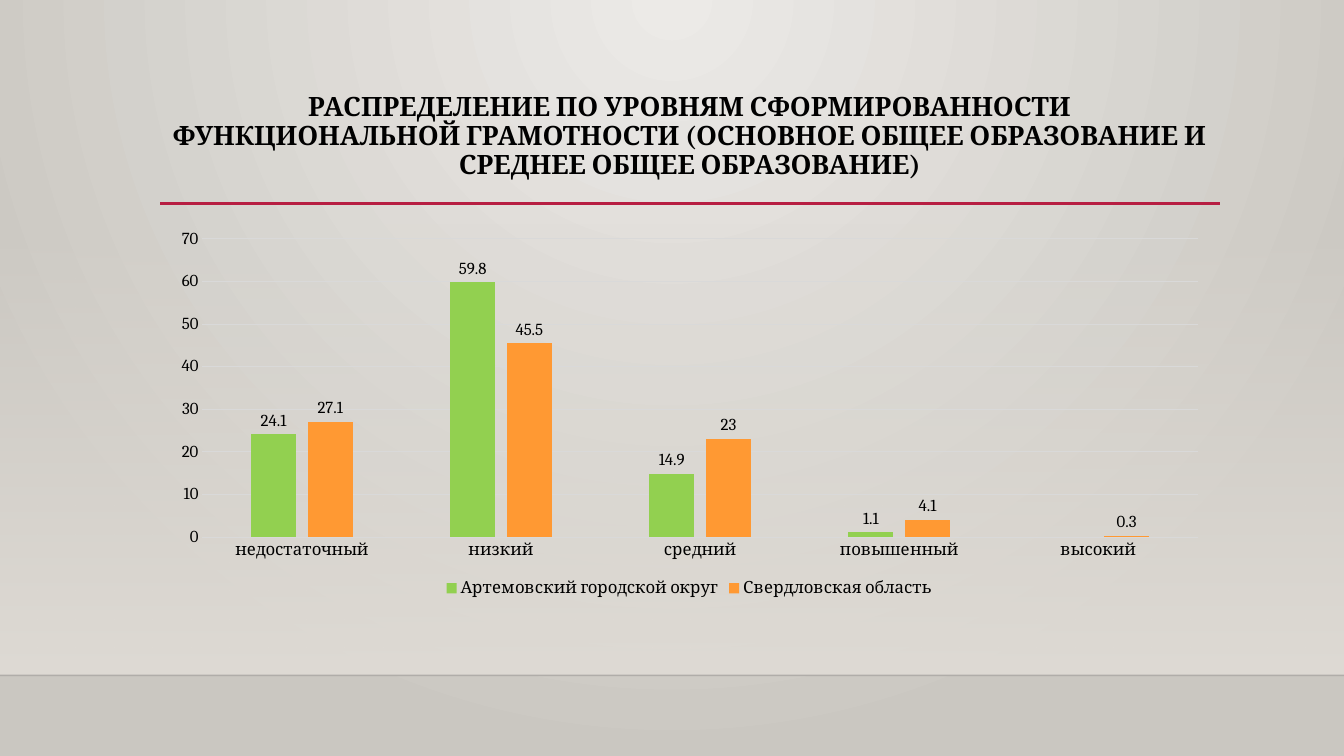
from lxml.etree import SubElement
from pptx import Presentation
from pptx.chart.data import CategoryChartData
from pptx.dml.color import RGBColor
from pptx.enum.chart import XL_CHART_TYPE, XL_LABEL_POSITION, XL_LEGEND_POSITION, XL_TICK_MARK
from pptx.enum.shapes import MSO_CONNECTOR, MSO_SHAPE
from pptx.enum.text import MSO_ANCHOR, PP_ALIGN
from pptx.oxml.ns import qn
from pptx.util import Inches, Pt

WIDTH, HEIGHT, FLOOR = 13.33, 7.5, 6.7
FONT = "Cambria"
COLORS = {
    "glow": "ECEAE7", "edge": "CAC7C1", "wall": "DFDBD5", "floor": "000001",
    "accent": "B71E42", "text": "000000", "grid": "D9D9D9",
    "district": "92D050", "region": "FF9933",
}
TITLE = ("РАСПРЕДЕЛЕНИЕ ПО УРОВНЯМ СФОРМИРОВАННОСТИ ФУНКЦИОНАЛЬНОЙ ГРАМОТНОСТИ "
         "(ОСНОВНОЕ ОБЩЕЕ ОБРАЗОВАНИЕ И СРЕДНЕЕ ОБЩЕЕ ОБРАЗОВАНИЕ)")
LEVELS = ["недостаточный", "низкий", "средний", "повышенный", "высокий"]
SERIES = [
    ("Артемовский городской округ", "district", [24.1, 59.8, 14.9, 1.1, None]),
    ("Свердловская область", "region", [27.1, 45.5, 23, 4.1, 0.3]),
]


def rgb(name):
    """Return the named colour."""
    return RGBColor.from_string(COLORS[name])


def apply(target, **values):
    """Set each given attribute on the target."""
    for name, value in values.items():
        setattr(target, name, value)


def style_font(font, size, **values):
    """Set the slide's typeface and text colour."""
    apply(font, name=FONT, size=Pt(size), **values)
    font.color.rgb = rgb("text")


def set_alpha(element, percent):
    """Make the first colour inside an element partly transparent."""
    color = next(element.iter(qn("a:srgbClr")))
    SubElement(color, qn("a:alpha"), val=str(percent * 1000))


def set_gradient(fill, first, last):
    """Fill with a two-colour gradient."""
    fill.gradient()
    for stop, name, position in zip(fill.gradient_stops, (first, last), (0, 1)):
        stop.color.rgb = rgb(name)
        stop.position = position


def add_rule(s, x, y, width, color, weight):
    """Draw a horizontal line without a shadow."""
    line = s.shapes.add_connector(MSO_CONNECTOR.STRAIGHT, Inches(x), Inches(y),
                                  Inches(x + width), Inches(y))
    line.line.color.rgb = rgb(color)
    line.line.width = Pt(weight)
    SubElement(line.element.spPr, qn("a:effectLst"))
    return line


def add_backdrop(s, x, y, width, height):
    """Paint the radial background, the fading wall and the floor line."""
    set_gradient(s.background.fill, "glow", "edge")
    grad = next(s.element.iter(qn("a:gradFill")))
    grad.remove(grad.find(qn("a:lin")))
    radial = SubElement(grad, qn("a:path"), path="circle")
    SubElement(radial, qn("a:fillToRect"), l="43000", r="43000", b="100000")

    wall = s.shapes.add_shape(MSO_SHAPE.RECTANGLE, Inches(x), Inches(y),
                              Inches(width), Inches(height))
    wall.shadow.inherit = False
    wall.line.fill.background()
    set_gradient(wall.fill, "wall", "wall")
    wall.fill.gradient_angle = 270
    set_alpha(wall.element.spPr, 0)
    floor = add_rule(s, x, y + height, width, "floor", 1)
    set_alpha(floor.element.spPr, 20)


def add_title(s, x, y, width, height):
    """Place the heading and the accent rule near the bottom of its box."""
    add_rule(s, x, y + height - 0.01, width + 0.01, "accent", 2.5)
    sp = s.shapes.add_textbox(Inches(x), Inches(y), Inches(width), Inches(height))
    tf = sp.text_frame
    apply(tf, word_wrap=True, vertical_anchor=MSO_ANCHOR.TOP)
    p = tf.paragraphs[0]
    apply(p, alignment=PP_ALIGN.CENTER, line_spacing=0.9)
    r = p.add_run()
    r.text = TITLE
    style_font(r.font, 19, bold=True)


def add_levels_chart(s, x, y, width, height):
    """Place the column chart that compares the district with the region."""
    data = CategoryChartData()
    data.categories = LEVELS
    for name, _, values in SERIES:
        data.add_series(name, values)
    chart = s.shapes.add_chart(XL_CHART_TYPE.COLUMN_CLUSTERED, Inches(x), Inches(y),
                               Inches(width), Inches(height), data).chart
    apply(chart, has_title=False, has_legend=True)
    apply(chart.legend, position=XL_LEGEND_POSITION.BOTTOM, include_in_layout=False)

    axes = chart.category_axis, chart.value_axis
    for axis in axes:
        apply(axis, major_tick_mark=XL_TICK_MARK.NONE, minor_tick_mark=XL_TICK_MARK.NONE)
    for part in (chart, chart.legend, *(axis.tick_labels for axis in axes)):
        style_font(part.font, 12)
    chart.value_axis.format.line.fill.background()
    for part in (chart.category_axis, chart.value_axis.major_gridlines):
        part.format.line.color.rgb = rgb("grid")
        part.format.line.width = Pt(0.75)

    plot = chart.plots[0]
    apply(plot, gap_width=219, overlap=-27, vary_by_categories=False)
    for series, (_, color, _) in zip(plot.series, SERIES):
        series.format.fill.solid()
        series.format.fill.fore_color.rgb = rgb(color)
        series.invert_if_negative = False
        labels = series.data_labels
        apply(labels, show_value=True, position=XL_LABEL_POSITION.OUTSIDE_END)
        style_font(labels.font, 12)


def main():
    """Build the slide and save it."""
    prs = Presentation()
    apply(prs, slide_width=Inches(WIDTH), slide_height=Inches(HEIGHT))
    s = prs.slides.add_slide(prs.slide_layouts[6])
    add_backdrop(s, 0, 2.21, WIDTH, FLOOR - 2.21)
    add_title(s, 1.59, 0.88, 10.5, 1.15)
    add_levels_chart(s, 1.59, 2.2, 10.5, 3.77)
    prs.save("out.pptx")


if __name__ == "__main__":
    main()
